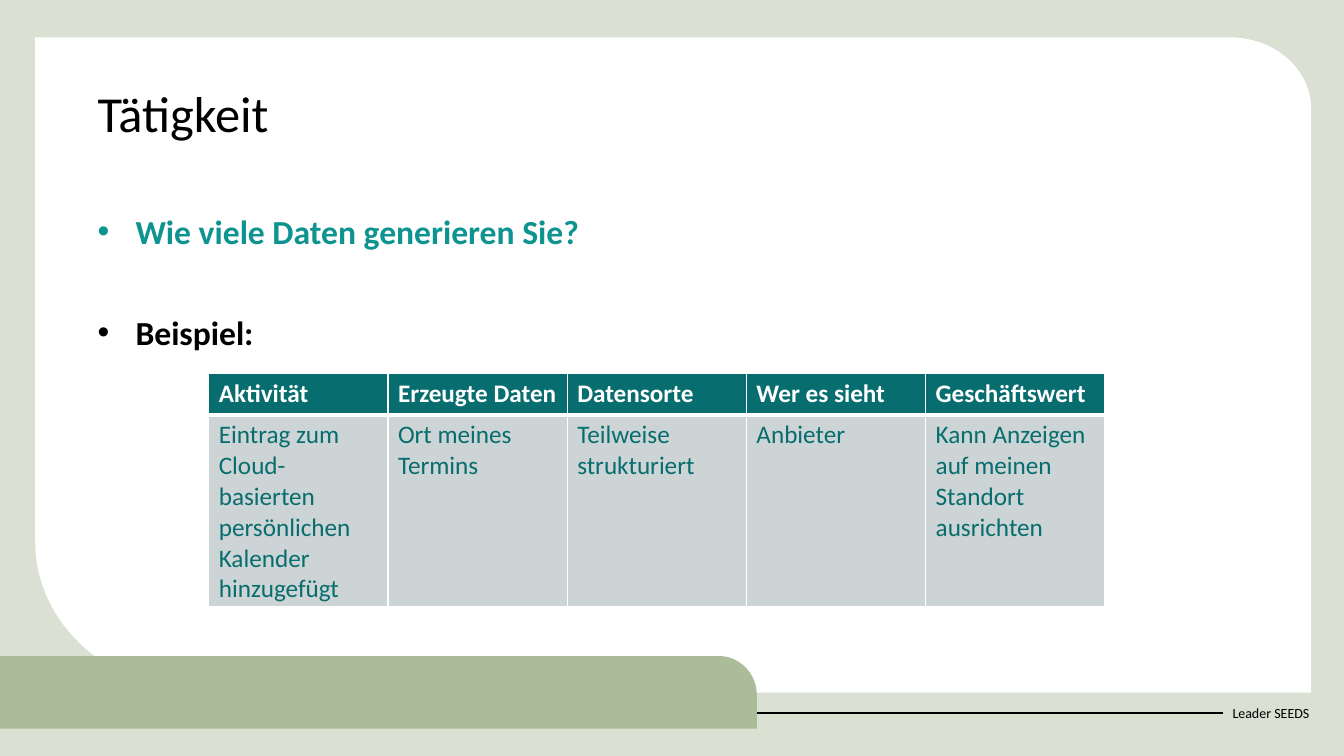
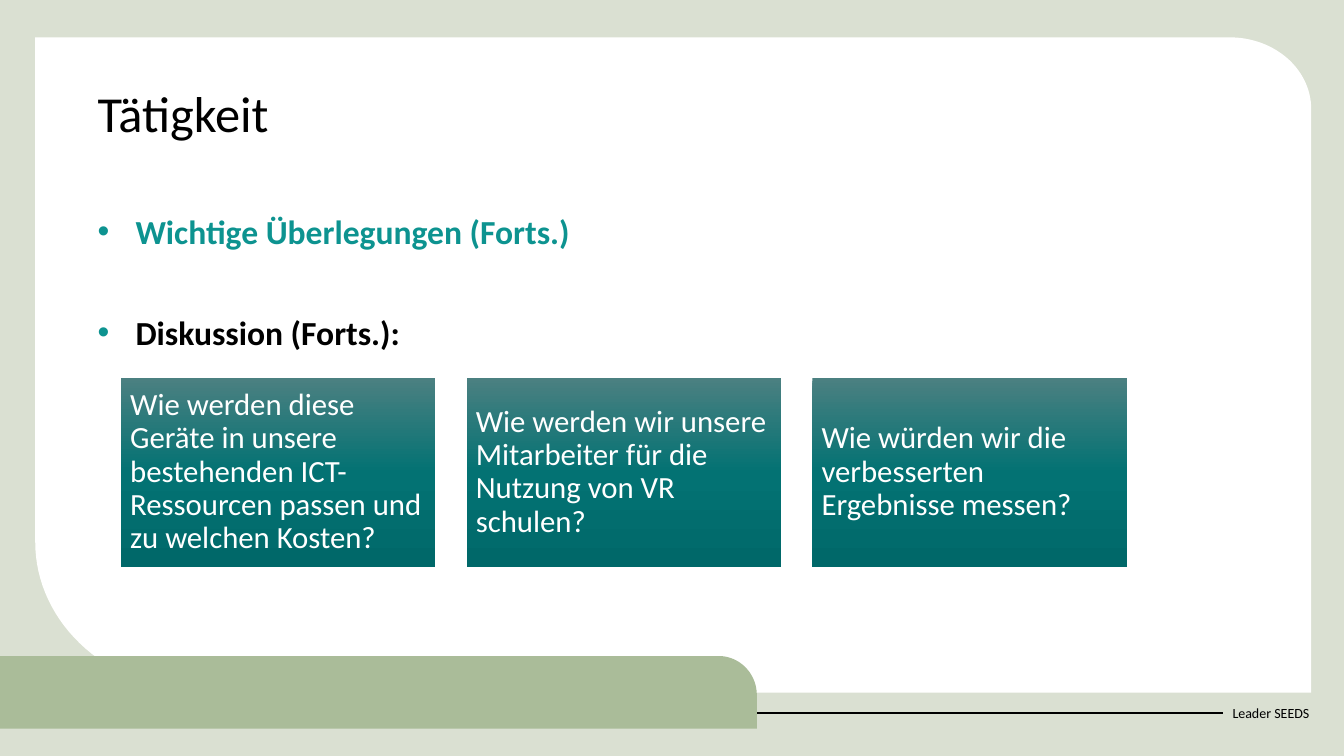
from collections import namedtuple
from copy import deepcopy
from math import cos, pi, sin

from pptx import Presentation
from pptx.dml.color import RGBColor
from pptx.enum.shapes import MSO_CONNECTOR, MSO_SHAPE
from pptx.enum.text import MSO_ANCHOR, PP_ALIGN
from pptx.oxml.ns import qn
from pptx.oxml.xmlchemy import OxmlElement
from pptx.util import Pt

RECTANGLE = MSO_SHAPE.RECTANGLE
STRAIGHT = MSO_CONNECTOR.STRAIGHT
TOP, MIDDLE = MSO_ANCHOR.TOP, MSO_ANCHOR.MIDDLE
LEFT = PP_ALIGN.LEFT

# The slide is a grid of 32 by 18 square units
UNIT = 381000
COLUMNS, ROWS = 32, 18
Box = namedtuple("Box", "left top width height")

PANEL = Box(0.84, 0.89, 30.38, 15.6)
BAND = Box(0, 15.62, 18.02, 1.73)
FOOTER = Box(29.11, 16.49, 2.42, 0.96)
TITLE = Box(2.09, 2, 27.82, 2.1)
BODY = Box(2.09, 5, 27.82, 10.5)
TABLE = Box(4.97, 8.9, 21.34, 5.54)
CARDS = Box(2.88, 9, 23.95, 4.49)

FONT = "Calibri"
BLACK, WHITE = "000000", "FFFFFF"
SAGE, PALE_SAGE = "AABC99", "DAE0D2"
TEAL, DARK_TEAL, PALE_GREY = "0D9390", "086D6E", "CCD4D5"
CARD_GRADIENT = [(0, "4B8081"), (0.5, "037273"), (1, "006869")]

TITLE_STYLE = {"size": Pt(36), "color": BLACK}
FOOTER_STYLE = {"size": Pt(10), "color": BLACK}
CARD_STYLE = {"size": Pt(22), "color": WHITE}
HEADER_STYLE = {"size": Pt(18), "color": WHITE, "bold": True}
CELL_STYLE = {"size": Pt(18), "color": DARK_TEAL, "bold": False}
BULLET_STYLE = {"size": Pt(24), "bold": True}

ACTIVITY_ROWS = [
    ["Aktivität", "Erzeugte Daten", "Datensorte", "Wer es sieht", "Geschäftswert"],
    ["Eintrag zum Cloud-basierten persönlichen Kalender hinzugefügt",
     "Ort meines Termins", "Teilweise strukturiert", "Anbieter",
     "Kann Anzeigen auf meinen Standort ausrichten"],
]
QUESTIONS = [
    "Wie werden diese Geräte in unsere bestehenden ICT-Ressourcen passen "
    "und zu welchen Kosten?",
    "Wie werden wir unsere Mitarbeiter für die Nutzung von VR schulen?",
    "Wie würden wir die verbesserten Ergebnisse messen?",
]


def rgb(value):
    return RGBColor.from_string(value)


def emu(*lengths):
    return [round(length * UNIT) for length in lengths]


def add_element(parent, tag, **attributes):
    element = OxmlElement(tag)
    for name, value in attributes.items():
        element.set(name, str(value))
    parent.append(element)
    return element


def write(paragraph, text, style):
    run = paragraph.add_run()
    run.text = text
    run.font.name = FONT
    for name, value in style.items():
        if name == "color":
            run.font.color.rgb = rgb(value)
        else:
            setattr(run.font, name, value)


def add_text_box(slide, box, anchor=TOP):
    text_box = slide.shapes.add_textbox(*emu(*box))
    text_box.text_frame.word_wrap = True
    text_box.text_frame.vertical_anchor = anchor
    return text_box


def arc(center_x, center_y, radius_x, radius_y, start, steps=32):
    """Clockwise quarter of an ellipse."""
    angles = [start + pi / 2 * step / steps for step in range(steps + 1)]
    return [(center_x + radius_x * cos(angle), center_y + radius_y * sin(angle))
            for angle in angles]


def add_rounded_panel(slide, box, color, top_right, bottom_left=None):
    """Rectangle with one or two opposite elliptical corners."""
    right, bottom = box.left + box.width, box.top + box.height
    radius_x, radius_y = top_right
    points = [(box.left, box.top)]
    points += arc(right - radius_x, box.top + radius_y, radius_x, radius_y, -pi / 2)
    points.append((right, bottom))
    if bottom_left:
        radius_x, radius_y = bottom_left
        points += arc(box.left + radius_x, bottom - radius_y, radius_x, radius_y, pi / 2)
    else:
        points.append((box.left, bottom))
    points = [emu(*point) for point in points]
    builder = slide.shapes.build_freeform(*points[0], scale=1.0)
    builder.add_line_segments(points[1:], close=True)
    shape = builder.convert_to_shape()
    shape.shadow.inherit = False
    shape.fill.solid()
    shape.fill.fore_color.rgb = rgb(color)
    shape.line.fill.background()


def add_footer(slide, box):
    label = add_text_box(slide, box, MIDDLE)
    write(label.text_frame.paragraphs[0], "Leader SEEDS", FOOTER_STYLE)
    middle = box.top + box.height / 2
    rule = slide.shapes.add_connector(STRAIGHT, *emu(0, middle, box.left, middle))
    rule.end_connect(label, 1)
    rule.line.color.rgb = rgb(BLACK)
    rule.line.width = Pt(1.5)
    add_element(rule._element.spPr, "a:effectLst")


def add_title(slide, box, text):
    paragraph = add_text_box(slide, box).text_frame.paragraphs[0]
    paragraph.line_spacing = 0.9
    write(paragraph, text, TITLE_STYLE)


def add_bullets(slide, box, bullets):
    """Each bullet is (text, text colour, bullet colour)."""
    frame = add_text_box(slide, box).text_frame
    for index, (text, color, bullet_color) in enumerate(bullets):
        paragraph = frame.add_paragraph() if index else frame.paragraphs[0]
        properties = paragraph._p.get_or_add_pPr()
        properties.set("marL", "342900")
        properties.set("indent", "-342900")
        add_element(add_element(properties, "a:buClr"), "a:srgbClr", val=bullet_color)
        add_element(properties, "a:buFont", typeface="Arial")
        add_element(properties, "a:buChar", char="•")
        paragraph.line_spacing = 0.9
        if index:
            paragraph.space_before = Pt(46.4)
        write(paragraph, text, {**BULLET_STYLE, "color": color})


def set_borders(cell, widths):
    properties = cell._tc.get_or_add_tcPr()
    for side, width in widths.items():
        line = add_element(properties, f"a:ln{side}", w=Pt(width))
        add_element(add_element(line, "a:solidFill"), "a:srgbClr", val=WHITE)


def add_activity_table(slide, box, rows):
    header_height = 0.98
    frame = slide.shapes.add_table(len(rows), len(rows[0]), *emu(*box))
    table = frame.table
    for column in table.columns:
        column.width = round(box.width / len(rows[0]) * UNIT)
    for row, height in zip(table.rows, emu(header_height, box.height - header_height)):
        row.height = height
    # Header row first, then the body row; a thick rule parts them
    formats = [
        (HEADER_STYLE, DARK_TEAL, {"L": 1, "R": 1, "T": 1, "B": 3}),
        (CELL_STYLE, PALE_GREY, {"L": 1, "R": 1, "T": 3, "B": 1}),
    ]
    for row, texts, (style, fill, borders) in zip(table.rows, rows, formats):
        for cell, text in zip(row.cells, texts):
            set_borders(cell, borders)
            cell.fill.solid()
            cell.fill.fore_color.rgb = rgb(fill)
            write(cell.text_frame.paragraphs[0], text, style)


def fill_gradient(shape, stops):
    """Gradient running from top to bottom."""
    shape.fill.gradient()
    shape.fill.gradient_angle = 270
    stop_list = shape._element.spPr.find(qn("a:gradFill")).find(qn("a:gsLst"))
    while len(stop_list) < len(stops):
        stop_list.append(deepcopy(stop_list[0]))
    for stop, (position, color) in zip(shape.fill.gradient_stops, stops):
        stop.position = position
        stop.color.rgb = rgb(color)


def add_question_cards(slide, box, questions):
    gap = 0.74
    width = (box.width - gap * (len(questions) - 1)) / len(questions)
    for index, question in enumerate(questions):
        left = box.left + index * (width + gap)
        card = slide.shapes.add_shape(RECTANGLE, *emu(left, box.top, width, box.height))
        card.shadow.inherit = False
        card.line.fill.background()
        fill_gradient(card, CARD_GRADIENT)
        frame = card.text_frame
        frame_format = {"word_wrap": True, "vertical_anchor": MIDDLE}
        for side in ("left", "top", "right", "bottom"):
            frame_format[f"margin_{side}"] = Pt(6.6)
        for name, value in frame_format.items():
            setattr(frame, name, value)
        paragraph = frame.paragraphs[0]
        paragraph.alignment = LEFT
        paragraph.line_spacing = 0.9
        write(paragraph, question, CARD_STYLE)


def add_activity_slide(presentation, bullets):
    """Shared frame, title and bullets."""
    slide = presentation.slides.add_slide(presentation.slide_layouts[6])
    slide.background.fill.solid()
    slide.background.fill.fore_color.rgb = rgb(PALE_SAGE)
    add_rounded_panel(slide, PANEL, WHITE, (1.94, 1.7), (4.08, 3.58))
    add_footer(slide, FOOTER)
    add_rounded_panel(slide, BAND, SAGE, (0.91, 0.93))
    add_title(slide, TITLE, "Tätigkeit")
    add_bullets(slide, BODY, bullets)
    return slide


def main():
    presentation = Presentation()
    presentation.slide_width, presentation.slide_height = emu(COLUMNS, ROWS)

    # Example of generated data
    slide = add_activity_slide(presentation, [
        ("Wie viele Daten generieren Sie?", TEAL, TEAL),
        ("Beispiel:", BLACK, BLACK),
    ])
    add_activity_table(slide, TABLE, ACTIVITY_ROWS)

    # Discussion questions
    slide = add_activity_slide(presentation, [
        ("Wichtige Überlegungen (Forts.)", TEAL, TEAL),
        ("Diskussion (Forts.):", BLACK, TEAL),
    ])
    add_question_cards(slide, CARDS, QUESTIONS)

    presentation.save("out.pptx")


if __name__ == "__main__":
    main()
